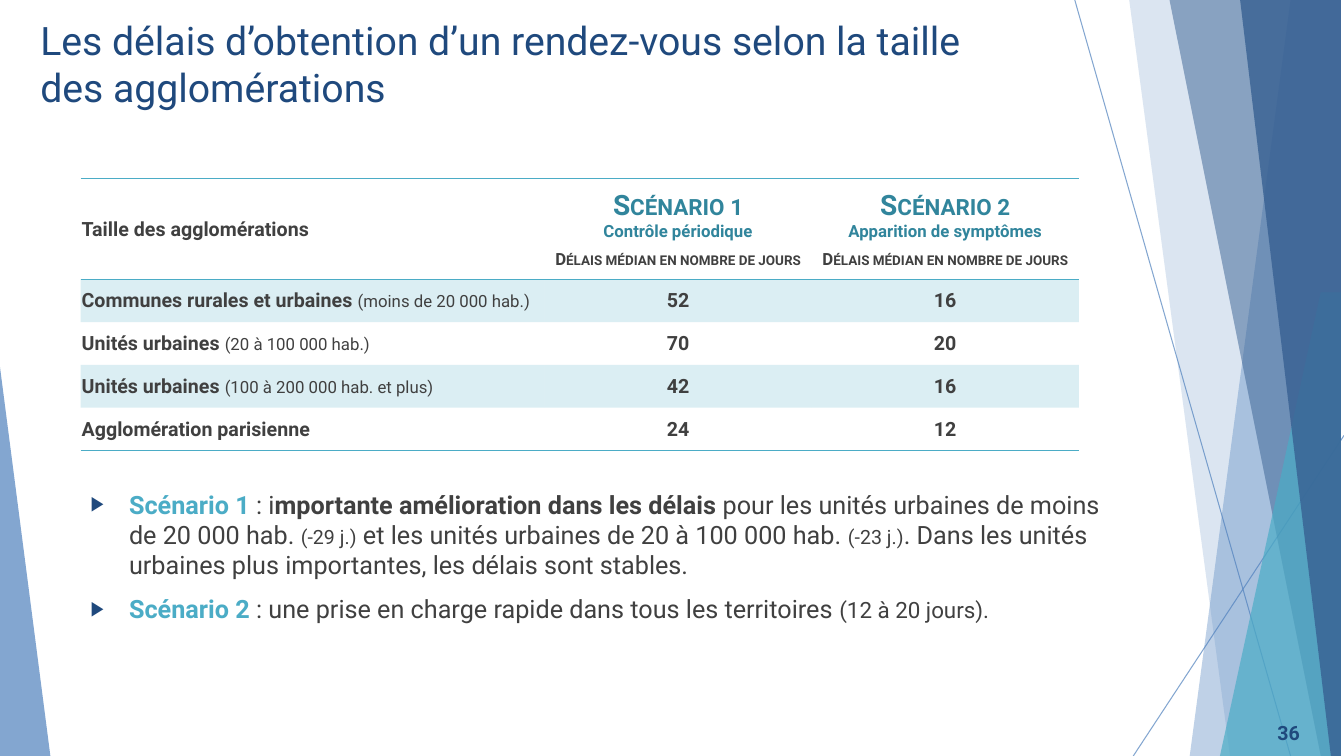
import pptx
import pptx.util
import pptx.dml.color
import pptx.enum.shapes
import pptx.enum.text
import pptx.oxml
import pptx.oxml.ns
from pptx.oxml.ns import qn

UNIT = pptx.util.Inches(0.1)
COLS, ROWS = 133.3, 75
FONT = "Roboto"
NAVY, BLUE, STEEL = "1F497D", "4F81BD", "376092"
TEAL, DARK_TEAL, GREY = "4BACC6", "31859C", "404040"
ALIGN = pptx.enum.text.PP_ALIGN
ANCHOR = pptx.enum.text.MSO_ANCHOR


def grid(*units):
    return [round(u * UNIT) for u in units]


def color(value):
    return pptx.dml.color.RGBColor.from_string(value)


def make_xml(text):
    ns = pptx.oxml.ns.nsdecls("a")
    return pptx.oxml.parse_xml(text.replace(" NS", " " + ns, 1))


def fade(element, percent):
    for clr in element.iter(qn("a:srgbClr")):
        clr.append(make_xml(f'<a:alpha NS val="{percent * 1000}"/>'))


def add_runs(p, runs):
    for text, size, value, bold, *caps in runs:
        r = p.add_run()
        r.text = text
        for name, setting in {"name": FONT, "size": pptx.util.Pt(size), "bold": bold}.items():
            setattr(r.font, name, setting)
        r.font.color.rgb = color(value)
        if caps:
            r.font._element.set("cap", "small")


def place(shape, box):
    for name, value in zip(("left", "top", "width", "height"), grid(*box)):
        setattr(shape, name, value)


def fill_shape(sp, value, percent):
    sp.shadow.inherit = False
    sp.fill.solid()
    sp.fill.fore_color.rgb = color(value)
    sp.line.fill.background()
    fade(sp._element.spPr, percent)


def add_decoration(s, box):
    left, top, width, height = box
    right, bottom = left + width, top + height
    for ends in [(106.6, top, 128, bottom), (right, 43.2, 112.4, bottom)]:
        line = s.shapes.add_connector(pptx.enum.shapes.MSO_CONNECTOR.STRAIGHT, *grid(*ends))
        line.line.color.rgb = color(BLUE)
        line.line.width = pptx.util.Pt(0.75)
        line._element.spPr.append(make_xml("<a:effectLst NS/>"))
        fade(line._element.spPr, 70)
    bands = [
        (128.3, top, 117.6, BLUE, 36),
        (111.9, top, 121.9, BLUE, 20),
        (115.6, top, 130.9, STEEL, 50),
        (130.7, 29.1, 120.9, TEAL, 70),
        (123.3, top, 132.2, STEEL, 80),
    ]
    for upper, start, lower, value, percent in bands:
        builder = s.shapes.build_freeform(upper, start, scale=UNIT)
        builder.add_line_segments([(right, start), (right, bottom), (lower, bottom)], close=True)
        fill_shape(builder.convert_to_shape(), value, percent)
    corner = s.shapes.add_shape(
        pptx.enum.shapes.MSO_SHAPE.ISOSCELES_TRIANGLE, *grid(left, bottom - 38.6, 5, 38.6))
    corner.adjustments[0] = 0
    fill_shape(corner, BLUE, 70)


def add_title(s, box):
    title = s.shapes.title
    s.shapes._spTree.append(title._element)
    place(title, box)
    tf = title.text_frame
    tf.auto_size = pptx.enum.text.MSO_AUTO_SIZE.NONE
    tf.vertical_anchor = ANCHOR.TOP
    p = tf.paragraphs[0]
    p.alignment = ALIGN.LEFT
    add_runs(p, [("Les délais d’obtention d’un rendez-vous selon la taille des agglomérations",
                  28, NAVY, False)])


def add_bullets(s, box):
    body = s.placeholders[1]
    s.shapes._spTree.append(body._element)
    place(body, box)
    tf = body.text_frame
    tf.auto_size = pptx.enum.text.MSO_AUTO_SIZE.NONE
    items = [
        [("Scénario 1 ", 18, TEAL, True),
         (": i", 18, GREY, False),
         ("mportante amélioration dans les délais ", 18, GREY, True),
         ("pour les unités urbaines de moins de 20 000 hab. ", 18, GREY, False),
         ("(-29 j.)", 14, GREY, False),
         (" et les unités urbaines de 20 à 100 000 hab. ", 18, GREY, False),
         ("(-23 j.)", 14, GREY, False),
         (". Dans les unités urbaines plus importantes, les délais sont stables.",
          18, GREY, False)],
        [("Scénario 2 ", 18, TEAL, True),
         (": une prise en charge rapide dans tous les territoires ", 18, GREY, False),
         ("(12 à 20 jours).", 16, GREY, False)],
    ]
    indent = grid(3.8)[0]
    for i, runs in enumerate(items):
        p = tf.add_paragraph() if i else tf.paragraphs[0]
        pPr = p._p.get_or_add_pPr()
        pPr.set("marL", str(indent))
        pPr.set("indent", str(-indent))
        for xml in (f'<a:buClr NS><a:srgbClr val="{NAVY}"/></a:buClr>',
                    '<a:buSzPct NS val="80000"/>',
                    '<a:buFont NS typeface="Arial"/>',
                    '<a:buChar NS char="▶"/>'):
            pPr.append(make_xml(xml))
        p.space_before = pptx.util.Pt(10 if i else 0)
        add_runs(p, runs)


def format_cell(cell, paragraphs, centred, shaded, edges):
    for side, margin in {"left": 0.1, "right": 0.1, "top": 0.1, "bottom": 0}.items():
        setattr(cell, f"margin_{side}", grid(margin)[0])
    cell.vertical_anchor = ANCHOR.MIDDLE
    tf = cell.text_frame
    for i, runs in enumerate(paragraphs):
        p = tf.add_paragraph() if i else tf.paragraphs[0]
        p.alignment = ALIGN.CENTER if centred else ALIGN.LEFT
        if i == 2:
            p.space_before = pptx.util.Pt(6)
        add_runs(p, runs)
    tcPr = cell._tc.get_or_add_tcPr()
    if shaded:
        cell.fill.solid()
        cell.fill.fore_color.rgb = color(TEAL)
        fade(tcPr, 20)
    else:
        cell.fill.background()
    for edge in edges:
        tcPr.insert(0, make_xml(
            f'<a:ln{edge} NS w="12700"><a:solidFill><a:srgbClr val="{TEAL}"/></a:solidFill>'
            f'<a:prstDash val="solid"/></a:ln{edge}>'))


def add_delay_table(s, box):
    def heading(name, subject):
        return [[(name, 20, DARK_TEAL, True, "small")],
                [(subject, 12, DARK_TEAL, True)],
                [("Délais médian en nombre de jours", 12, GREY, True, "small")]]

    towns = [
        ("Communes rurales et urbaines ", "(moins de 20 000 hab.)", "52", "16"),
        ("Unités urbaines ", "(20 à 100 000 hab.)", "70", "20"),
        ("Unités urbaines ", "(100 à 200 000 hab. et plus)", "42", "16"),
        ("Agglomération parisienne", "", "24", "12"),
    ]
    rows = [[[[("Taille des agglomérations", 14, GREY, True)]],
             heading("Scénario 1", "Contrôle périodique"),
             heading("Scénario 2", "Apparition de symptômes")]]
    for name, size, *delays in towns:
        label = [(name, 14, GREY, True)] + ([(size, 12, GREY, False)] if size else [])
        rows.append([[label]] + [[[(delay, 14, GREY, True)]] for delay in delays])

    table = s.shapes.add_table(len(rows), 3, *grid(*box)).table
    table.first_row = table.horz_banding = False
    table._tbl.tblPr.find(qn("a:tableStyleId")).text = "{2D5ABB26-0587-4C30-8999-92F81FD0307C}"
    width, height, head = box[2], box[3], 10
    for column, span in zip(table.columns, (width - 2 * 26.5, 26.5, 26.5)):
        column.width = grid(span)[0]
    for i, row in enumerate(rows):
        table.rows[i].height = grid((height - head) / len(towns) if i else head)[0]
        edges = {0: "BT", len(towns): "B"}.get(i, "")
        for j, paragraphs in enumerate(row):
            format_cell(table.cell(i, j), paragraphs, j > 0, i % 2 == 1, edges)


def add_page_number(s, box):
    tf = s.shapes.add_textbox(*grid(*box)).text_frame
    tf.word_wrap = True
    tf.vertical_anchor = ANCHOR.MIDDLE
    p = tf.paragraphs[0]
    p.alignment = ALIGN.RIGHT
    add_runs(p, [("36", 14, NAVY, True)])


def main():
    prs = pptx.Presentation()
    prs.slide_width, prs.slide_height = grid(COLS, ROWS)
    s = prs.slides.add_slide(prs.slide_layouts[1])
    add_decoration(s, (0, 0, COLS, ROWS))
    add_title(s, (3, 1.1, 99, 15.2))
    add_bullets(s, (8, 48, 103.1, 18.6))
    add_delay_table(s, (8, 17.7, 99, 27))
    add_page_number(s, (122.4, 70.7, 7.5, 4))
    prs.save("out.pptx")


if __name__ == "__main__":
    main()
